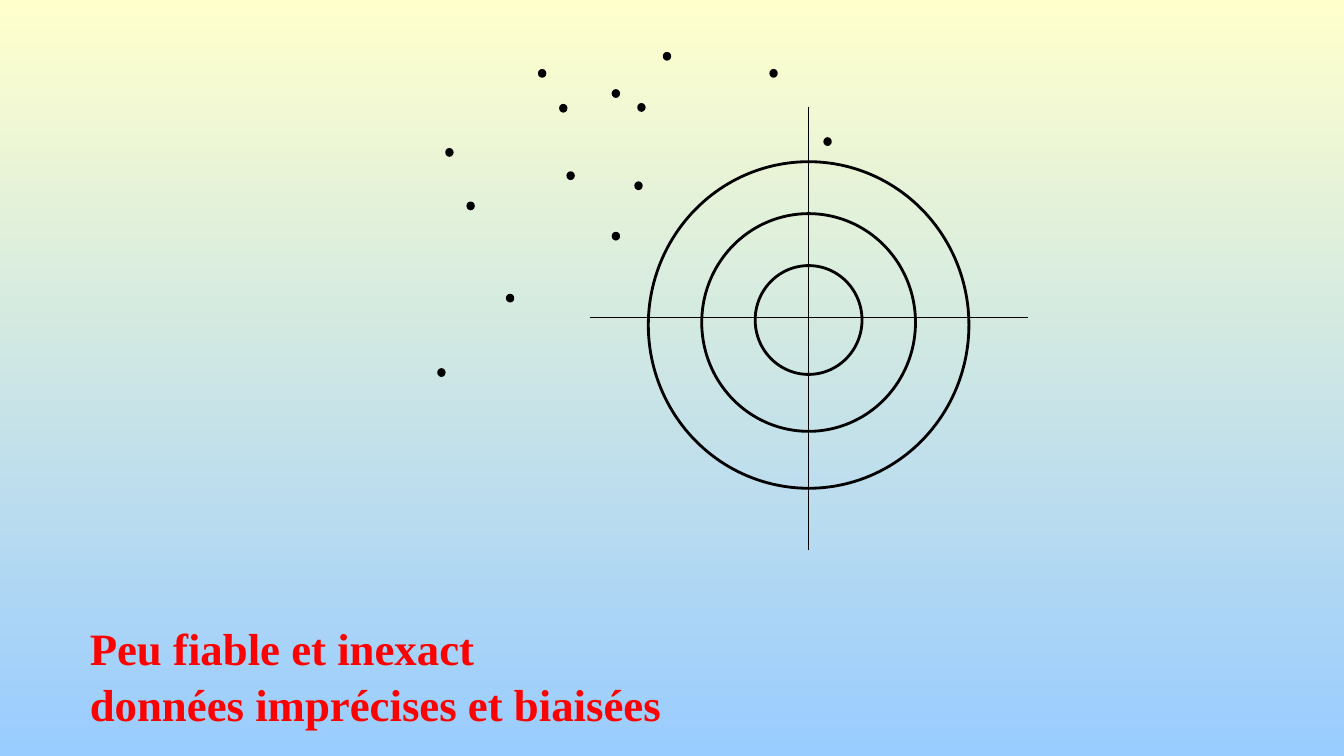
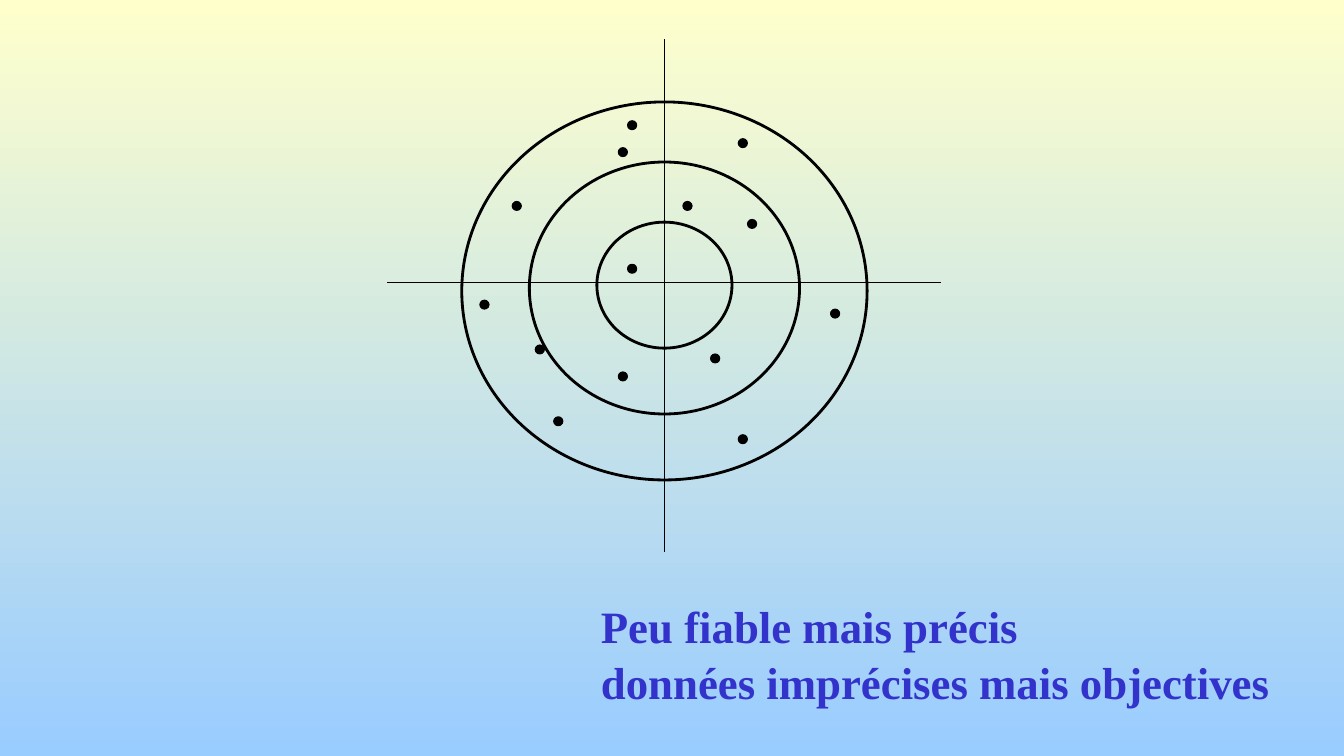
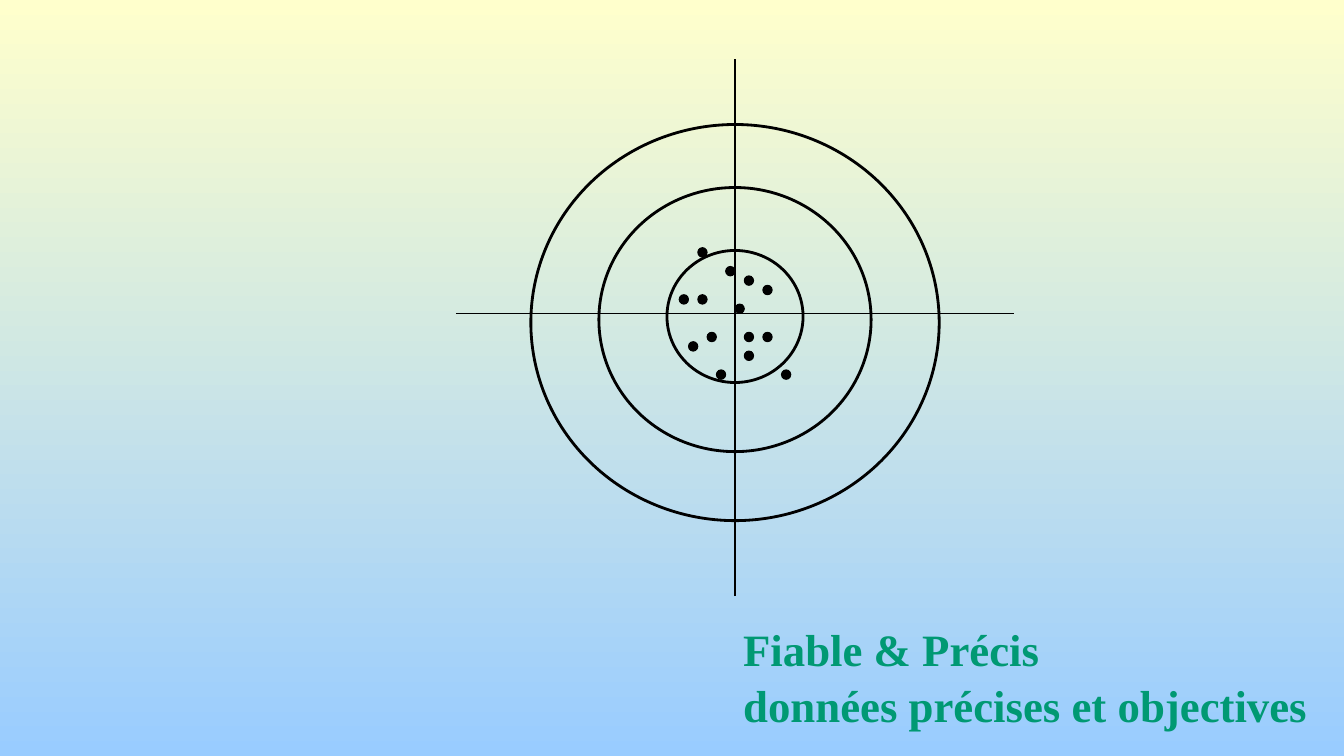
from dataclasses import dataclass

from lxml import etree
from pptx import Presentation
from pptx.dml.color import RGBColor
from pptx.enum.shapes import MSO_CONNECTOR, MSO_SHAPE
from pptx.enum.text import MSO_ANCHOR, MSO_AUTO_SIZE, PP_ALIGN
from pptx.oxml.ns import qn
from pptx.util import Inches, Pt

OVAL = MSO_SHAPE.OVAL
STRAIGHT = MSO_CONNECTOR.STRAIGHT
TOP = MSO_ANCHOR.TOP
LEFT = PP_ALIGN.LEFT
FIXED_SIZE = MSO_AUTO_SIZE.NONE
TITLE_ONLY = 5


@dataclass(frozen=True)
class Theme:
    """Colours, type and line sizes shared by all slides."""

    sky_top: str = "FFFFCC"
    sky_bottom: str = "99CCFF"
    ink: str = "000000"
    font: str = "Times New Roman"
    title_size: float = 32
    title_spacing: float = 1.05
    ring_line: float = 2
    fine_line: float = 0.75


@dataclass(frozen=True)
class Target:
    """Centre and inner ring size of a target, with its hits in dot-sized cells."""

    center_x: float
    center_y: float
    ring_width: float
    ring_height: float
    hits: tuple


@dataclass(frozen=True)
class Verdict:
    """A slide: its title, title box, title colour and target."""

    title: str
    box: tuple
    color: str
    target: Target


THEME = Theme()
RINGS = 3
RING_RISE = 0.477
CROSS_HALF_WIDTH = 2.05
CROSS_ABOVE = 1.93
CROSS_BELOW = 2.14
DOT_WIDTH = 0.0683
DOT_HEIGHT = 0.0712

VERDICTS = (
    Verdict(
        "Peu fiable et inexact\ndonnées imprécises et biaisées",
        (0.79, 6.07, 12.49, 1.25),
        "FF0000",
        Target(8.02, 3.15, 1.06, 1.08, (
            (-50.8, 6.6), (-19.9, -34.2), (-49.7, -21.8), (-23.4, -27.6),
            (-37, -32), (-23.8, -17.5), (-41.4, -3), (-46.8, -14.9),
            (-26.9, -11), (-5.3, -32), (2.1, -23.2), (-34.1, -27.5),
            (-26.9, -29.4), (-33.1, -18.8))),
    ),
    Verdict(
        "Peu fiable mais précis\ndonnées imprécises mais objectives",
        (5.86, 5.85, 7.32, 1.25),
        "3333CC",
        Target(6.59, 2.8, 1.34, 1.25, (
            (8, -16), (8, 17), (-5, 10), (5, 8), (-5, -15), (-4, -2),
            (-14, 7), (18, 3), (-4, -18), (-12, 15), (-16.5, -9),
            (9, -7), (2, -9), (-20, 2))),
    ),
    Verdict(
        "Fiable & Précis\ndonnées précises et objectives",
        (7.27, 6.08, 5.83, 1.25),
        "009973",
        Target(7.29, 3.11, 1.35, 1.31, (
            (1, 2), (3, -3), (-5, 3), (-2, 6), (-3, 2), (-4, -2),
            (1, 4), (5, 6), (-4, -7), (1, -4), (-6, -2), (0, -1),
            (-1, -5), (3, 2))),
    ),
)


def rgb(value):
    """Return a colour object for a hex string."""
    return RGBColor.from_string(value)


def paint_background(master):
    """Give every slide the vertical sky gradient."""
    fill = master.background.fill
    fill.gradient()
    fill.gradient_angle = 270
    for stop, color in zip(fill.gradient_stops, (THEME.sky_top, THEME.sky_bottom)):
        stop.color.rgb = rgb(color)


def set_line(line, width):
    """Draw an outline in the ink colour."""
    line.color.rgb = rgb(THEME.ink)
    line.width = Pt(width)


def add_oval(shapes, box, width, filled=False):
    """Add an ellipse, hollow or filled with ink."""
    oval = shapes.add_shape(OVAL, *map(Inches, box))
    oval.shadow.inherit = False
    if filled:
        oval.fill.solid()
        oval.fill.fore_color.rgb = rgb(THEME.ink)
    else:
        oval.fill.background()
    set_line(oval.line, width)


def add_hairline(shapes, *ends):
    """Add a thin straight line without shadow."""
    hairline = shapes.add_connector(STRAIGHT, *map(Inches, ends))
    set_line(hairline.line, THEME.fine_line)
    etree.SubElement(hairline._element.spPr, qn("a:effectLst"))


def add_target(slide, target):
    """Add the rings, crosshair and hits as one group."""
    shapes = slide.shapes.add_group_shape().shapes
    x, y = target.center_x, target.center_y
    width, height = target.ring_width, target.ring_height
    for ring in range(1, RINGS + 1):
        box = (x - ring * width / 2, y - ring * RING_RISE * height,
               ring * width, ring * height)
        add_oval(shapes, box, THEME.ring_line)
    add_hairline(shapes, x, y + CROSS_BELOW * height, x, y - CROSS_ABOVE * height)
    reach = CROSS_HALF_WIDTH * width
    add_hairline(shapes, x - reach, y, x + reach, y)
    dot_width, dot_height = DOT_WIDTH * width, DOT_HEIGHT * height
    for column, row in target.hits:
        box = (x + column * dot_width, y + row * dot_height, dot_width, dot_height)
        add_oval(shapes, box, THEME.fine_line, filled=True)


def set_title(slide, verdict):
    """Place and format the title placeholder."""
    title = slide.shapes.title
    title.left, title.top, title.width, title.height = map(Inches, verdict.box)
    frame = title.text_frame
    frame.text = verdict.title
    frame.word_wrap = True
    frame.auto_size = FIXED_SIZE
    frame.vertical_anchor = TOP
    frame.margin_left = frame.margin_right = Inches(0.1)
    frame.margin_top = frame.margin_bottom = Inches(0.06)
    for paragraph in frame.paragraphs:
        paragraph.alignment = LEFT
        paragraph.line_spacing = THEME.title_spacing
        paragraph.space_before = Pt(0)
        for run in paragraph.runs:
            run.font.name = THEME.font
            run.font.size = Pt(THEME.title_size)
            run.font.bold = True
            run.font.color.rgb = rgb(verdict.color)


def main():
    """Build and save the presentation."""
    deck = Presentation()
    deck.slide_width, deck.slide_height = Inches(13.33), Inches(7.5)
    paint_background(deck.slide_master)
    for verdict in VERDICTS:
        slide = deck.slides.add_slide(deck.slide_layouts[TITLE_ONLY])
        set_title(slide, verdict)
        add_target(slide, verdict.target)
    deck.save("out.pptx")


if __name__ == "__main__":
    main()
